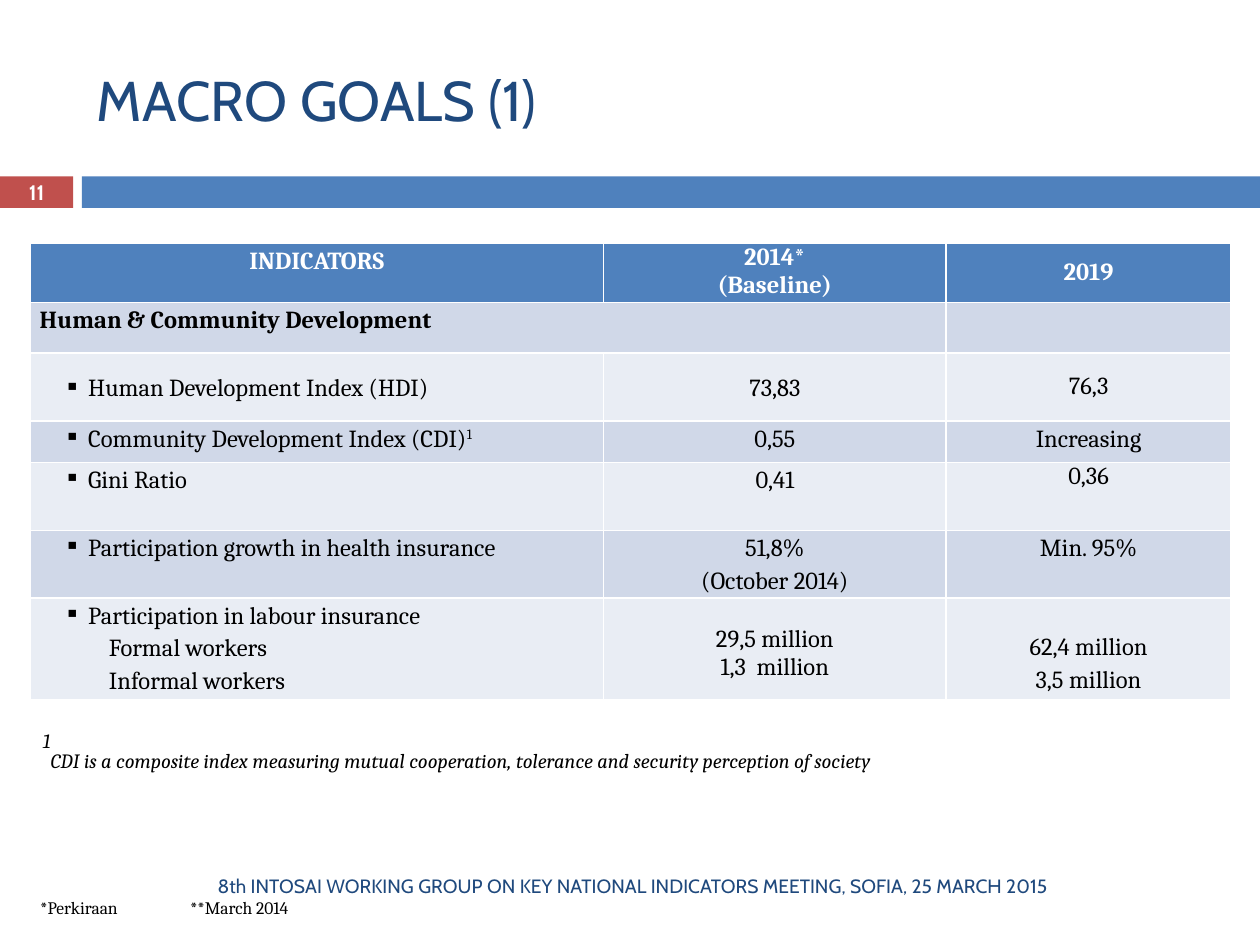
from lxml import etree
from pptx import Presentation
from pptx.dml.color import RGBColor
from pptx.enum.shapes import MSO_SHAPE
from pptx.enum.text import MSO_ANCHOR, PP_ALIGN
from pptx.oxml.ns import qn
from pptx.util import Inches, Pt

RECTANGLE = MSO_SHAPE.RECTANGLE
LEFT, CENTER = PP_ALIGN.LEFT, PP_ALIGN.CENTER
TOP, MIDDLE = MSO_ANCHOR.TOP, MSO_ANCHOR.MIDDLE
HEADING_FONT, BODY_FONT = "Cabin", "Cambria"
CELL = 0.1
COLORS = {
    "navy": "1F497D", "blue": "4F81BD", "red": "C0504D", "white": "FFFFFF",
    "black": "000000", "dark band": "D0D8E8", "light band": "E9EDF4",
}


def grid(count):
    return Inches(count * CELL)


def color(name):
    return RGBColor.from_string(COLORS[name])


def add_property(parent, tag, **attributes):
    return etree.SubElement(parent, qn(tag), attributes)


def write(frame, paragraphs, size=14, font=BODY_FONT, ink="black", bold=False,
          italic=False, align=LEFT, anchor=TOP, spacing=None, bullet=None, tab=None):
    frame.word_wrap = True
    frame.vertical_anchor = anchor
    for index, content in enumerate(paragraphs):
        paragraph = frame.add_paragraph() if index else frame.paragraphs[0]
        paragraph.alignment = align
        if spacing:
            paragraph.line_spacing = spacing
        properties = paragraph._p.get_or_add_pPr()
        if bullet and index == 0:
            properties.set("marL", str(grid(3.85)))
            properties.set("indent", str(-grid(1.9)))
            add_property(properties, "a:buSzPct", val="90000")
            add_property(properties, "a:buChar", char=bullet)
        elif bullet:
            properties.set("marL", str(grid(5.5)))
        if tab:
            stops = add_property(properties, "a:tabLst")
            add_property(stops, "a:tab", pos=str(grid(tab)), algn="l")
        pieces = [(content, 0)] if isinstance(content, str) else content
        for text, baseline in pieces:
            run = paragraph.add_run()
            run.text = text
            run.font.size = Pt(size)
            run.font.name = font
            run.font.bold = bold
            run.font.italic = italic
            run.font.color.rgb = color(ink)
            if baseline:
                run._r.get_or_add_rPr().set("baseline", str(baseline * 1000))


class GoalsSlide:
    def __init__(self, presentation):
        self.slide = presentation.slides.add_slide(presentation.slide_layouts[6])
        self.shapes = self.slide.shapes

    def text(self, box, paragraphs, **style):
        shape = self.shapes.add_textbox(*map(grid, box))
        write(shape.text_frame, paragraphs, **style)

    def bar(self, box, fill):
        shape = self.shapes.add_shape(RECTANGLE, *map(grid, box))
        shape.shadow.inherit = False
        shape.fill.solid()
        shape.fill.fore_color.rgb = color(fill)
        shape.line.fill.background()
        return shape

    def table(self, box, widths, heights):
        frame = self.shapes.add_table(len(heights), len(widths), *map(grid, box))
        table = frame.table
        for column, width in zip(table.columns, widths):
            column.width = grid(width)
        for index, height in enumerate(heights):
            table.rows[index].height = grid(height)
            band = "dark band" if index % 2 else "light band"
            for cell in table.rows[index].cells:
                cell.fill.solid()
                cell.fill.fore_color.rgb = color(band if index else "blue")
        return table

    def cell(self, cell, paragraphs, anchor=TOP, top=0, **style):
        cell.margin_left = cell.margin_right = grid(0.75)
        cell.margin_top, cell.margin_bottom = grid(top), 0
        cell.vertical_anchor = anchor
        write(cell.text_frame, paragraphs, anchor=anchor, **style)


def add_indicators(page):
    table = page.table((2.4, 19.3, 95.3, 34.3), (45.5, 27.2, 22.6),
                       (4.7, 2.7, 5.4, 3.3, 5.4, 5.1, 7.7))
    header = dict(ink="white", bold=True, align=CENTER)
    page.cell(table.cell(0, 0), ["INDICATORS"], spacing=1.15, **header)
    page.cell(table.cell(0, 1), ["2014*", "(Baseline)"], **header)
    page.cell(table.cell(0, 2), ["2019"], anchor=MIDDLE, **header)
    table.cell(1, 0).merge(table.cell(1, 1))
    page.cell(table.cell(1, 0), ["Human & Community Development"], bold=True, spacing=1.15)

    wide, plain = dict(spacing=1.15), {}
    middle = dict(anchor=MIDDLE)
    rows = [
        (["Human Development Index (HDI)"], middle,
         ["73,83"], wide | middle, ["76,3"], middle),
        ([[("Community Development Index (CDI)", 0), ("1", 30)]], plain,
         ["0,55"], wide, ["Increasing"], wide),
        (["Gini Ratio"], plain, ["0,41"], wide, ["0,36"], plain),
        (["Participation growth in health insurance"], plain,
         ["51,8%", "(October 2014)"], wide, ["Min. 95%"], wide),
        (["Participation in labour insurance", "Formal workers", "Informal workers"], plain,
         ["29,5 million", "1,3  million"], dict(top=2.2),
         ["62,4 million", "3,5 million"], dict(top=2.5) | wide),
    ]
    for index, row in enumerate(rows, start=2):
        name, name_style, baseline, baseline_style, target, target_style = row
        page.cell(table.cell(index, 0), name, bullet="▪", spacing=1.15, **name_style)
        page.cell(table.cell(index, 1), baseline, align=CENTER, **baseline_style)
        page.cell(table.cell(index, 2), target, align=CENTER, **target_style)


def main():
    presentation = Presentation()
    presentation.slide_width, presentation.slide_height = grid(100), grid(75)
    page = GoalsSlide(presentation)
    heading = dict(font=HEADING_FONT, anchor=MIDDLE)
    number = page.bar((0, 14, 5.8, 2.5), "red")
    write(number.text_frame, ["11"], size=12, ink="white", bold=True, align=CENTER, **heading)
    page.bar((6.5, 14, 93.5, 2.5), "blue")
    page.text((6.7, 2.5, 89.2, 10.8), ["MACRO GOALS (1)"], size=32, ink="navy", **heading)
    add_indicators(page)
    page.text((2.2, 70.7, 35.4, 2.5), ["*Perkiraan\t**March 2014"], size=10, tab=11.9)
    page.text((2.4, 57, 94.9, 3.3), [[
        ("1", 30),
        ("CDI is a composite index measuring mutual cooperation, tolerance "
         "and security perception of society", -25),
    ]], size=20, italic=True)
    page.text((6.7, 68.3, 87.1, 4), [
        "8th INTOSAI WORKING GROUP ON KEY NATIONAL INDICATORS MEETING, SOFIA, 25 MARCH 2015",
    ], size=11, ink="navy", align=CENTER, **heading)
    presentation.save("out.pptx")


if __name__ == "__main__":
    main()
